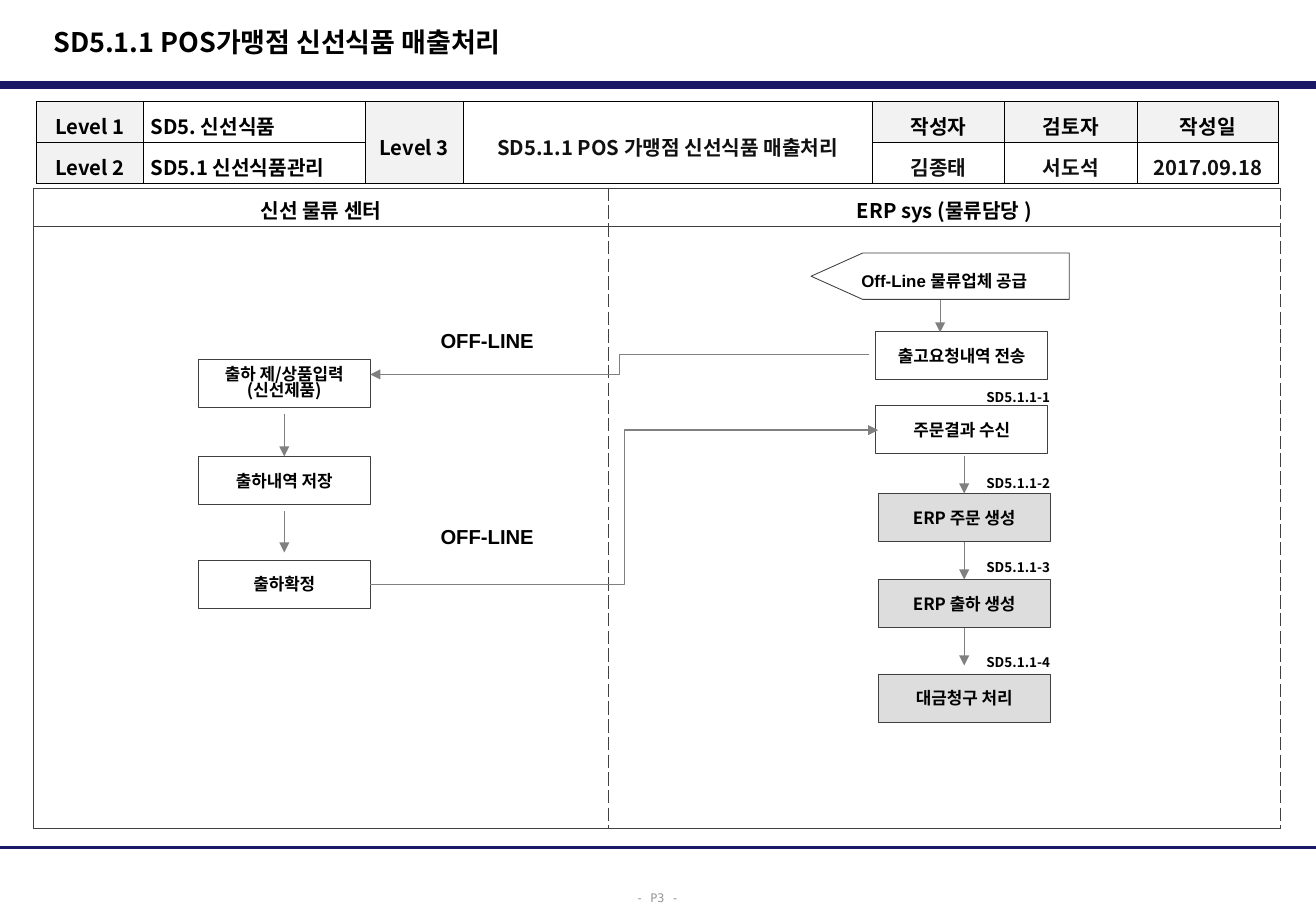
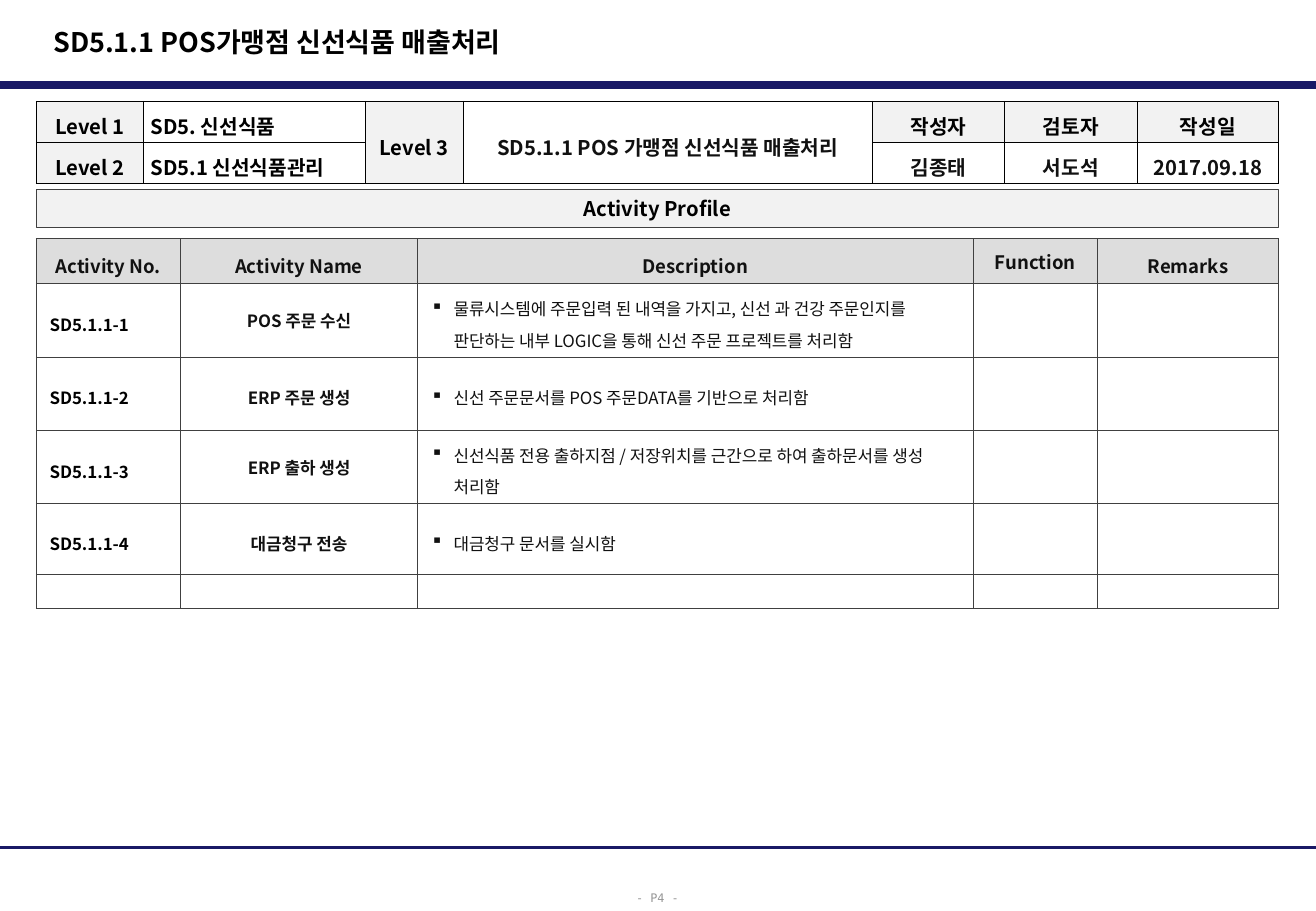
from lxml import etree
from pptx import Presentation
from pptx.dml.color import RGBColor
from pptx.enum.shapes import MSO_CONNECTOR, MSO_SHAPE
from pptx.enum.text import MSO_ANCHOR, PP_ALIGN
from pptx.oxml.ns import qn
from pptx.util import Pt

BLACK = RGBColor(0x00, 0x00, 0x00)
INK = RGBColor(0x11, 0x11, 0x11)
NAVY = RGBColor(0x19, 0x19, 0x66)
DARK_GRAY = RGBColor(0x40, 0x40, 0x40)
ARROW_GRAY = RGBColor(0x80, 0x80, 0x80)
FOOTER_GRAY = RGBColor(0x96, 0x96, 0x96)
MID_GRAY = RGBColor(0xDD, 0xDD, 0xDD)
LIGHT_GRAY = RGBColor(0xF2, 0xF2, 0xF2)

KOREAN_FONT = "Noto Sans CJK KR"
LEFT, CENTER, RIGHT = PP_ALIGN.LEFT, PP_ALIGN.CENTER, PP_ALIGN.RIGHT
TOP, MIDDLE = MSO_ANCHOR.TOP, MSO_ANCHOR.MIDDLE
STRAIGHT, ELBOW = MSO_CONNECTOR.STRAIGHT, MSO_CONNECTOR.ELBOW
RECTANGLE = MSO_SHAPE.RECTANGLE
PENTAGON = MSO_SHAPE.FLOWCHART_OFFPAGE_CONNECTOR

WIDTH, HEIGHT = 780, 540
TABLE_LEFT = 21.5
TABLE_WIDTH = 736.5


def write_text(holder, text, size=10, bold=True, color=BLACK, font=KOREAN_FONT,
               align=LEFT, anchor=TOP, spacing=1, bullet="", wrap=True,
               margins=(7.2, 3.6, 7.2, 3.6)):
    """Write text into a shape or a table cell, one paragraph per line."""
    frame = holder.text_frame
    is_cell = hasattr(holder, "margin_left")
    box = holder if is_cell else frame
    box.margin_left, box.margin_top, box.margin_right, box.margin_bottom = map(Pt, margins)
    box.vertical_anchor = anchor
    if not is_cell:
        frame.word_wrap = wrap
    for index, line in enumerate(text.split("\n")):
        paragraph = frame.add_paragraph() if index else frame.paragraphs[0]
        paragraph.alignment = align
        paragraph.line_spacing = spacing
        if bullet:
            properties = paragraph._p.get_or_add_pPr()
            properties.set("marL", str(Pt(13.5)))
            properties.set("indent", str(-Pt(13.5)))
            etree.SubElement(properties, qn("a:buChar")).set("char", bullet)
        if not line:
            paragraph._p.get_or_add_endParaRPr().set("sz", str(size * 100))
            continue
        run = paragraph.add_run()
        run.text = line
        run.font.size = Pt(size)
        run.font.bold = bold
        run.font.color.rgb = color
        run.font.name = font
        east_asian = etree.SubElement(run._r.get_or_add_rPr(), qn("a:ea"))
        east_asian.set("typeface", KOREAN_FONT)


def add_grid(slide, left, top, widths, heights, border, dashed=False):
    """Add an unfilled table; dashed applies to all vertical rules but the first."""
    table = slide.shapes.add_table(len(heights), len(widths), Pt(left), Pt(top),
                                   Pt(sum(widths)), Pt(sum(heights))).table
    table.first_row = table.horz_banding = False
    for column, width in zip(table.columns, widths):
        column.width = Pt(width)
    for row, height in zip(table.rows, heights):
        row.height = Pt(height)
        for index, cell in enumerate(row.cells):
            properties = cell._tc.get_or_add_tcPr()
            for side in ("lnL", "lnR", "lnT", "lnB"):
                line = etree.SubElement(properties, qn("a:" + side), w=str(Pt(0.5)))
                fill = etree.SubElement(line, qn("a:solidFill"))
                etree.SubElement(fill, qn("a:srgbClr"), val=str(border))
                is_dashed = dashed and (side == "lnR" or side == "lnL" and index > 0)
                etree.SubElement(line, qn("a:prstDash"), val="dash" if is_dashed else "solid")
            cell.fill.background()
    return table


presentation = Presentation()
presentation.slide_width = Pt(WIDTH)
presentation.slide_height = Pt(HEIGHT)
flow_slide, profile_slide = [
    presentation.slides.add_slide(presentation.slide_layouts[6]) for _ in range(2)]

# Shared title, page number and process header
HEADER_ROWS = (
    ("Level 1", "SD5. 신선식품", "Level 3", "SD5.1.1 POS 가맹점 신선식품 매출처리",
     "작성자", "검토자", "작성일"),
    ("Level 2", "SD5.1 신선식품관리", None, None, "김종태", "서도석", "2017.09.18"),
)
HEADER_LABELS = ("Level 1", "Level 2", "Level 3", "작성자", "검토자", "작성일")

for page, slide in enumerate((flow_slide, profile_slide), start=3):
    title = slide.shapes.add_textbox(Pt(24.5), Pt(11.5), Pt(512), Pt(27))
    write_text(title, "SD5.1.1 POS가맹점 신선식품 매출처리", size=16, anchor=MIDDLE)
    footer = slide.shapes.add_textbox(Pt(370), Pt(522), Pt(40.5), Pt(18))
    write_text(footer, f"- P{page} -", size=7, bold=False, color=FOOTER_GRAY,
               font="DejaVu Sans Mono", spacing=1.3, wrap=False)

    header = add_grid(slide, TABLE_LEFT, 60, (63.5, 131.5, 58, 242.5, 78.5, 78.5, 84),
                      (24.3, 24.3), BLACK)
    for column in (2, 3):
        header.cell(0, column).merge(header.cell(1, column))
    for row, texts in enumerate(HEADER_ROWS):
        for column, text in enumerate(texts):
            if text is None:
                continue
            cell = header.cell(row, column)
            is_label = text in HEADER_LABELS
            write_text(cell, text, size=12, color=BLACK if is_label or column == 1 else INK,
                       align=LEFT if column == 1 else CENTER, anchor=MIDDLE,
                       spacing=1.3, margins=(4.3, 0.7, 4.3, 0.7))
            if is_label:
                cell.fill.solid()
                cell.fill.fore_color.rgb = LIGHT_GRAY

# Swimlanes
lanes = add_grid(flow_slide, 20, 111.5, (340.5, 398.5), (22.5, 357), DARK_GRAY, dashed=True)
for column, text in enumerate(("신선 물류 센터", "ERP sys (물류담당 )")):
    write_text(lanes.cell(0, column), text, size=12, align=CENTER, anchor=MIDDLE,
               margins=(7.2, 3.6, 7.2, 0))

# Flow steps and the profile heading: slide, preset, place, fill, text, size, spacing
STEP_WIDTH, STEP_HEIGHT = 102, 28.5
STEPS = (
    (117.5, 213, None, "출하 제/상품입력\n(신선제품)"),
    (117.5, 270.5, None, "출하내역 저장"),
    (117.5, 332, None, "출하확정"),
    (519, 196.5, None, "출고요청내역 전송"),
    (519, 240.5, None, "주문결과 수신"),
    (520.5, 292.5, MID_GRAY, "ERP 주문 생성"),
    (520.5, 343.5, MID_GRAY, "ERP 출하 생성"),
    (520.5, 399.5, MID_GRAY, "대금청구 처리"),
)
BOXES = [(flow_slide, RECTANGLE, (left, top, STEP_WIDTH, STEP_HEIGHT), fill, text, 10)
         for left, top, fill, text in STEPS]
BOXES += [
    (flow_slide, PENTAGON, (543.5, 87.25, 27.5, 153), WHITE_FILL, "", 10)
    for WHITE_FILL in (RGBColor(0xFF, 0xFF, 0xFF),)]
BOXES.append((profile_slide, RECTANGLE, (TABLE_LEFT, 112.5, TABLE_WIDTH, 22.5),
              LIGHT_GRAY, "Activity Profile", 12))

for slide, preset, place, fill, text, size in BOXES:
    shape = slide.shapes.add_shape(preset, *map(Pt, place))
    shape.shadow.inherit = False
    shape.line.color.rgb = DARK_GRAY
    shape.line.width = Pt(0.5)
    if fill is None:
        shape.fill.background()
    else:
        shape.fill.solid()
        shape.fill.fore_color.rgb = fill
    if preset == PENTAGON:
        shape.rotation = 90
    else:
        write_text(shape, text, size=size, align=CENTER, anchor=MIDDLE,
                   spacing=0.8 if "\n" in text else 1, margins=(2.9, 3.6, 2.9, 3.6))

# Flow captions
for left, top, width, height, text, size in (
        (503.5, 157, 142, 19.5, "Off-Line 물류업체 공급", 10),
        (254, 191, 74, 21.5, "OFF-LINE", 12),
        (254, 307, 74, 21.5, "OFF-LINE", 12)):
    caption = flow_slide.shapes.add_textbox(Pt(left), Pt(top), Pt(width), Pt(height))
    write_text(caption, text, size=size, font="Arial")

# Step numbers
for number, top in enumerate((228, 278.5, 328.5, 384.5), start=1):
    label = flow_slide.shapes.add_textbox(Pt(579.5), Pt(top), Pt(43), Pt(15))
    write_text(label, f"SD5.1.1-{number}", size=8, align=RIGHT, margins=(0, 2.9, 0, 2.9))

# Activity table
ACTIVITY_ROWS = (
    ("Activity No.", "Activity Name", "Description", "Function", "Remarks"),
    ("SD5.1.1-1", "POS 주문 수신",
     "물류시스템에 주문입력 된 내역을 가지고, 신선 과 건강 주문인지를 판단하는 내부 LOGIC을 통해 "
     "신선 주문 프로젝트를 처리함", "", ""),
    ("SD5.1.1-2", "ERP 주문 생성", "신선 주문문서를 POS 주문DATA를 기반으로 처리함", "", ""),
    ("SD5.1.1-3", "ERP 출하 생성",
     "신선식품 전용 출하지점 / 저장위치를 근간으로 하여 출하문서를 생성 처리함", "", ""),
    ("SD5.1.1-4", "대금청구 전송", "대금청구 문서를 실시함", "", ""),
    ("", "", "", "", ""),
)
SINGLE_SPACED = ("Function", "POS 주문 수신", "ERP 출하 생성")
activities = add_grid(profile_slide, TABLE_LEFT, 141.5, (85.5, 140.5, 329.5, 73.5, 107.5),
                      (26.7, 43.5, 43.5, 43.5, 42, 20.3), DARK_GRAY)
for row, texts in enumerate(ACTIVITY_ROWS):
    for column, text in enumerate(texts):
        cell = activities.cell(row, column)
        is_heading = row == 0
        is_description = column == 2 and not is_heading
        write_text(cell, text, size=11 if is_heading else 10, bold=not is_description,
                   color=BLACK if column == 0 and not is_heading else INK,
                   align=CENTER if is_heading or column == 1 else LEFT, anchor=MIDDLE,
                   spacing=1 if text in SINGLE_SPACED else 1.3,
                   bullet="▪" if is_description and text else "",
                   margins=(7.9, 2.9, 7.9, 2.9))
        if is_heading:
            cell.fill.solid()
            cell.fill.fore_color.rgb = MID_GRAY

# Bands on both slides, arrows on the flow
BANDS = (
    (STRAIGHT, (0, 50.5, WIDTH, 50.5), NAVY, 4.5),
    (STRAIGHT, (0, 502.5, WIDTH, 502.5), NAVY, 1.5),
)
ARROWS = tuple((kind, ends, ARROW_GRAY, 0.75) for kind, ends in (
    (STRAIGHT, (168.5, 245.5, 168.5, 270.5)),
    (STRAIGHT, (168.5, 303, 168.5, 327.5)),
    (STRAIGHT, (557.25, 178, 557.25, 197)),
    (STRAIGHT, (571.5, 270, 571.5, 292.5)),
    (STRAIGHT, (571.5, 321, 571.5, 343.5)),
    (STRAIGHT, (571.5, 372, 571.5, 394.5)),
    (ELBOW, (515, 210, 219.5, 222)),
    (ELBOW, (219.5, 346.5, 520.5, 255)),
))
for slide, lines in ((flow_slide, BANDS + ARROWS), (profile_slide, BANDS)):
    for kind, ends, color, width in lines:
        connector = slide.shapes.add_connector(kind, *map(Pt, ends))
        connector.line.color.rgb = color
        connector.line.width = Pt(width)
        if color == ARROW_GRAY:
            outline = connector.line._get_or_add_ln()
            etree.SubElement(outline, qn("a:tailEnd"), type="triangle")
        etree.SubElement(connector._element.spPr, qn("a:effectLst"))

presentation.save("out.pptx")
